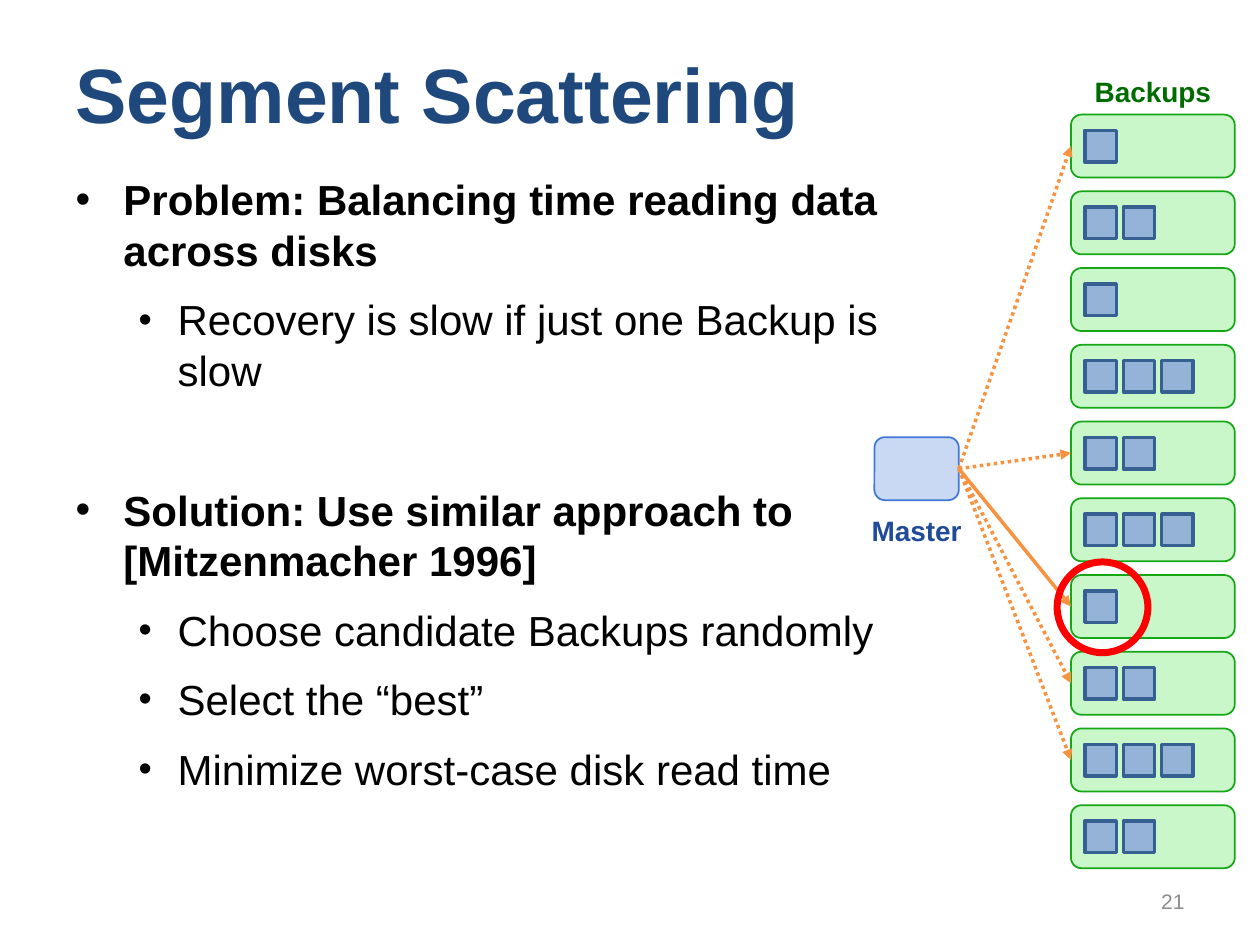
"""Build the Segment Scattering slide."""
from lxml.etree import SubElement
from pptx import Presentation
from pptx.dml.color import RGBColor
from pptx.enum.dml import MSO_LINE
from pptx.enum.shapes import MSO_CONNECTOR, MSO_SHAPE
from pptx.enum.text import MSO_ANCHOR, MSO_AUTO_SIZE, PP_ALIGN
from pptx.oxml.ns import qn
from pptx.util import Inches, Pt

COLORS = {
    "title": "1F497D", "body": "000000", "number": "8C8C8C",
    "backup": "C9F7C9", "backup_line": "15A715", "backup_text": "006C00",
    "master": "C9D8F3", "master_line": "4177D7", "master_text": "204B98",
    "segment": "95B3D7", "segment_line": "376092",
    "arrow": "F69240", "highlight": "FF0000",
}
BULLETS = [
    (0, "Problem: Balancing time reading data across disks", 5),
    (1, "Recovery is slow if just one Backup is slow", 5),
    (0, "Solution: Use similar approach to [Mitzenmacher 1996]", 45),
    (1, "Choose candidate Backups randomly", 5),
    (1, "Select the “best”", 5),
    (1, "Minimize worst-case disk read time", 5),
]
INDENTS = [(0.38, -0.38), (0.81, -0.31)]
SEGMENT_COUNTS = [1, 2, 1, 3, 2, 3, 1, 2, 3, 2]
CANDIDATES = [0, 4, 6, 7, 8]
BEST = 6
BACKUP_TOP, BACKUP_PITCH = 0.91, 0.609


def rgb(name):
    return RGBColor.from_string(COLORS[name])


def place(shape, left, top, width, height):
    shape.left, shape.top = Inches(left), Inches(top)
    shape.width, shape.height = Inches(width), Inches(height)


def style_runs(p, size, color, bold=False):
    for r in p.runs:
        r.font.name = "Arial"
        r.font.size = Pt(size)
        r.font.bold = bold
        r.font.color.rgb = rgb(color)


def add_shape(s, kind, box, line, weight, fill=None):
    sp = s.shapes.add_shape(kind, *map(Inches, box))
    sp.shadow.inherit = False
    if fill:
        sp.fill.solid()
        sp.fill.fore_color.rgb = rgb(fill)
    else:
        sp.fill.background()
    sp.line.color.rgb = rgb(line)
    sp.line.width = Pt(weight)
    return sp


def add_label(s, text, box, size, color, align, bold=True, wrap=False):
    tf = s.shapes.add_textbox(*map(Inches, box)).text_frame
    tf.word_wrap = wrap
    tf.vertical_anchor = MSO_ANCHOR.MIDDLE
    tf.text = text
    p = tf.paragraphs[0]
    p.alignment = align
    style_runs(p, size, color, bold)


def add_arrow(s, start, end, dashed):
    line = s.shapes.add_connector(MSO_CONNECTOR.STRAIGHT, 0, 0, 0, 0)
    line.begin_connect(start, 3)
    line.end_connect(end, 1)
    line.line.color.rgb = rgb("arrow")
    line.line.width = Pt(2)
    if dashed:
        line.line.dash_style = MSO_LINE.ROUND_DOT
    SubElement(line.line._get_or_add_ln(), qn("a:tailEnd"), type="triangle")
    SubElement(line._element.spPr, qn("a:effectLst"))


def fill_title(s):
    sp = s.shapes.title
    place(sp, 0.5, 0.3, 9, 0.87)
    tf = sp.text_frame
    tf.text = "Segment Scattering"
    tf.vertical_anchor = MSO_ANCHOR.MIDDLE
    tf.paragraphs[0].alignment = PP_ALIGN.LEFT
    style_runs(tf.paragraphs[0], 44, "title", True)


def fill_body(s):
    sp = s.placeholders[1]
    place(sp, 0.5, 1.33, 6.83, 5.37)
    tf = sp.text_frame
    tf.auto_size = MSO_AUTO_SIZE.NONE
    for i, (level, text, before) in enumerate(BULLETS):
        p = tf.add_paragraph() if i else tf.paragraphs[0]
        p.text = text
        p.level = level
        p.space_before, p.space_after = Pt(before), Pt(6)
        style_runs(p, 24, "body", level == 0)
        margin, indent = INDENTS[level]
        pPr = p._p.get_or_add_pPr()
        pPr.set("marL", str(Inches(margin)))
        pPr.set("indent", str(Inches(indent)))
        SubElement(pPr, qn("a:buSzPct"), val="90000" if level else "100000")
        SubElement(pPr, qn("a:buFont"), typeface="Arial")
        SubElement(pPr, qn("a:buChar"), char="•")


def add_backup(s, index, count):
    top = BACKUP_TOP + index * BACKUP_PITCH
    backup = add_shape(s, MSO_SHAPE.ROUNDED_RECTANGLE, (8.5, top, 1.3, 0.5),
                       "backup_line", 1, "backup")
    for i in range(count):
        add_shape(s, MSO_SHAPE.RECTANGLE,
                  (8.61 + i * 0.305, top + 0.125, 0.25, 0.25),
                  "segment_line", 2, "segment")
    return backup


def main():
    prs = Presentation()
    prs.slide_width, prs.slide_height = Inches(10), Inches(7.5)
    s = prs.slides.add_slide(prs.slide_layouts[1])
    fill_title(s)
    fill_body(s)
    add_label(s, "21", (7.17, 6.95, 2.33, 0.4), 12, "number",
              PP_ALIGN.RIGHT, bold=False, wrap=True)
    master = add_shape(s, MSO_SHAPE.ROUNDED_RECTANGLE, (6.94, 3.47, 0.67, 0.5),
                       "master_line", 1, "master")
    add_label(s, "Master", (6.81, 4.02, 0.93, 0.37), 16, "master_text",
              PP_ALIGN.CENTER)
    add_label(s, "Backups", (8.59, 0.54, 1.13, 0.37), 16, "backup_text",
              PP_ALIGN.LEFT)
    backups = [add_backup(s, i, n) for i, n in enumerate(SEGMENT_COUNTS)]
    for i in CANDIDATES:
        add_arrow(s, master, backups[i], dashed=i != BEST)
    add_shape(s, MSO_SHAPE.OVAL, (8.39, 4.46, 0.72, 0.72), "highlight", 4)
    prs.save("out.pptx")


if __name__ == "__main__":
    main()
